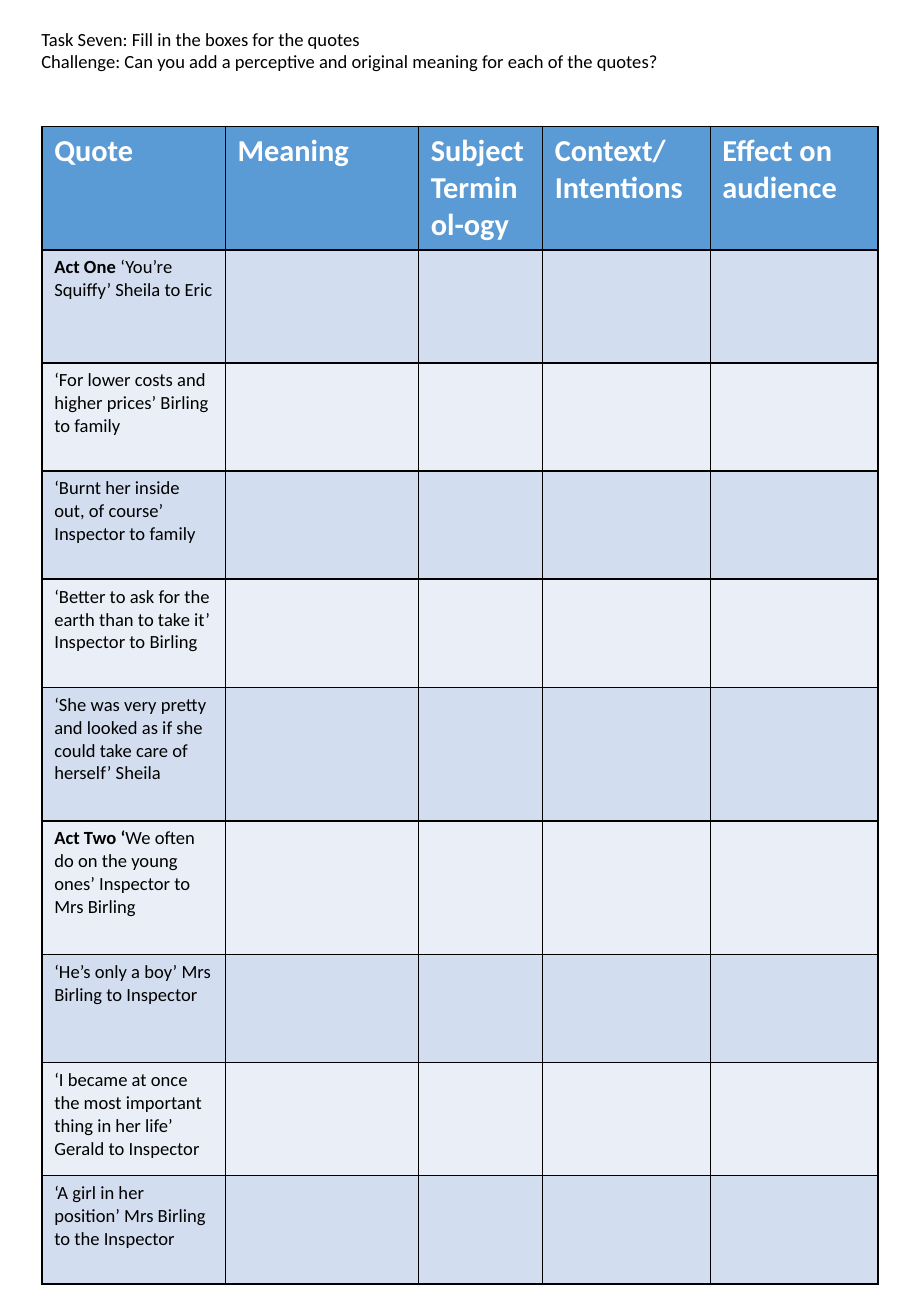
from dataclasses import dataclass

from lxml.etree import SubElement
from pptx import Presentation
from pptx.dml.color import RGBColor
from pptx.enum.text import MSO_ANCHOR, MSO_AUTO_SIZE, PP_ALIGN
from pptx.oxml.ns import qn
from pptx.util import Pt


@dataclass(frozen=True)
class Theme:
    font: str = "Calibri"
    header_size: int = 18
    text_size: int = 11
    text: str = "000000"
    header_text: str = "FFFFFF"
    header_fill: str = "5B9BD5"
    bands: tuple = ("D2DEEF", "EAEFF7")
    border: str = "000000"
    border_width: int = 1


THEME = Theme()

TASK_LINES = (
    "Task Seven: Fill in the boxes for the quotes",
    "Challenge: Can you add a perceptive and original meaning for each of the quotes?",
)
COLUMNS = (
    ("Quote", 108.7),
    ("Meaning", 114.5),
    ("Subject Terminol-ogy", 73.5),
    ("Context/Intentions", 99.4),
    ("Effect on audience", 99.4),
)
HEADER_HEIGHT = 64.1
# Bold opening, remaining text, row height
QUOTES = (
    ("Act One ", "‘You’re Squiffy’ Sheila to Eric", 67),
    ("", "‘For lower costs and higher prices’ Birling to family", 64.1),
    ("", "‘Burnt her inside out, of course’ Inspector to family", 64.1),
    ("", "‘Better to ask for the earth than to take it’ Inspector to Birling", 64.1),
    ("", "‘She was very pretty and looked as if she could take care of herself’ Sheila", 79.2),
    ("Act Two ‘", "We often do on the young ones’ Inspector to Mrs Birling", 79.2),
    ("", "‘He’s only a boy’ Mrs Birling to Inspector", 64.1),
    ("", "‘I became at once the most important thing in her life’ Gerald to Inspector", 67),
    ("", "‘A girl in her position’ Mrs Birling to the Inspector", 64.1),
)


def set_font(paragraph, size, color):
    font = paragraph.font
    font.name = THEME.font
    font.size = Pt(size)
    font.color.rgb = RGBColor.from_string(color)


def add_borders(cell):
    properties = cell._tc.get_or_add_tcPr()
    for side in ("lnL", "lnR", "lnT", "lnB"):
        line = SubElement(properties, qn(f"a:{side}"), w=str(Pt(THEME.border_width)))
        fill = SubElement(line, qn("a:solidFill"))
        SubElement(fill, qn("a:srgbClr"), val=THEME.border)


def format_cell(cell, fill_color, text_size, text_color):
    add_borders(cell)
    cell.fill.solid()
    cell.fill.fore_color.rgb = RGBColor.from_string(fill_color)
    set_font(cell.text_frame.paragraphs[0], text_size, text_color)


def add_cell_run(cell, text, bold):
    run = cell.text_frame.paragraphs[0].add_run()
    run.text = text
    run.font.bold = bold


def add_task_heading(slide):
    title = slide.shapes.title
    title.left, title.top, title.width, title.height = Pt(17.3), Pt(13), Pt(471.6), Pt(33.8)
    frame = title.text_frame
    frame.text = "\n".join(TASK_LINES)
    frame.word_wrap = True
    frame.auto_size = MSO_AUTO_SIZE.NONE
    frame.vertical_anchor = MSO_ANCHOR.TOP
    for paragraph in frame.paragraphs:
        paragraph.alignment = PP_ALIGN.LEFT
        set_font(paragraph, THEME.text_size, THEME.text)


def add_quote_table(slide):
    heights = [HEADER_HEIGHT] + [height for _, _, height in QUOTES]
    width = sum(column_width for _, column_width in COLUMNS)
    table = slide.shapes.add_table(
        len(heights), len(COLUMNS), Pt(25), Pt(75), Pt(width), Pt(sum(heights))
    ).table
    for row, height in zip(table.rows, heights):
        row.height = Pt(height)

    for index, (heading, column_width) in enumerate(COLUMNS):
        table.columns[index].width = Pt(column_width)
        cell = table.cell(0, index)
        add_cell_run(cell, heading, True)
        format_cell(cell, THEME.header_fill, THEME.header_size, THEME.header_text)

    for row_index, (opening, quote, _) in enumerate(QUOTES, start=1):
        quote_cell = table.cell(row_index, 0)
        if opening:
            add_cell_run(quote_cell, opening, True)
        add_cell_run(quote_cell, quote, False)
        band = THEME.bands[(row_index - 1) % len(THEME.bands)]
        for cell in table.rows[row_index].cells:
            format_cell(cell, band, THEME.text_size, THEME.text)


def main():
    presentation = Presentation()
    presentation.slide_width, presentation.slide_height = Pt(540), Pt(780)
    title_only = presentation.slide_layouts.get_by_name("Title Only")
    slide = presentation.slides.add_slide(title_only)
    add_task_heading(slide)
    add_quote_table(slide)
    presentation.save("out.pptx")


if __name__ == "__main__":
    main()
